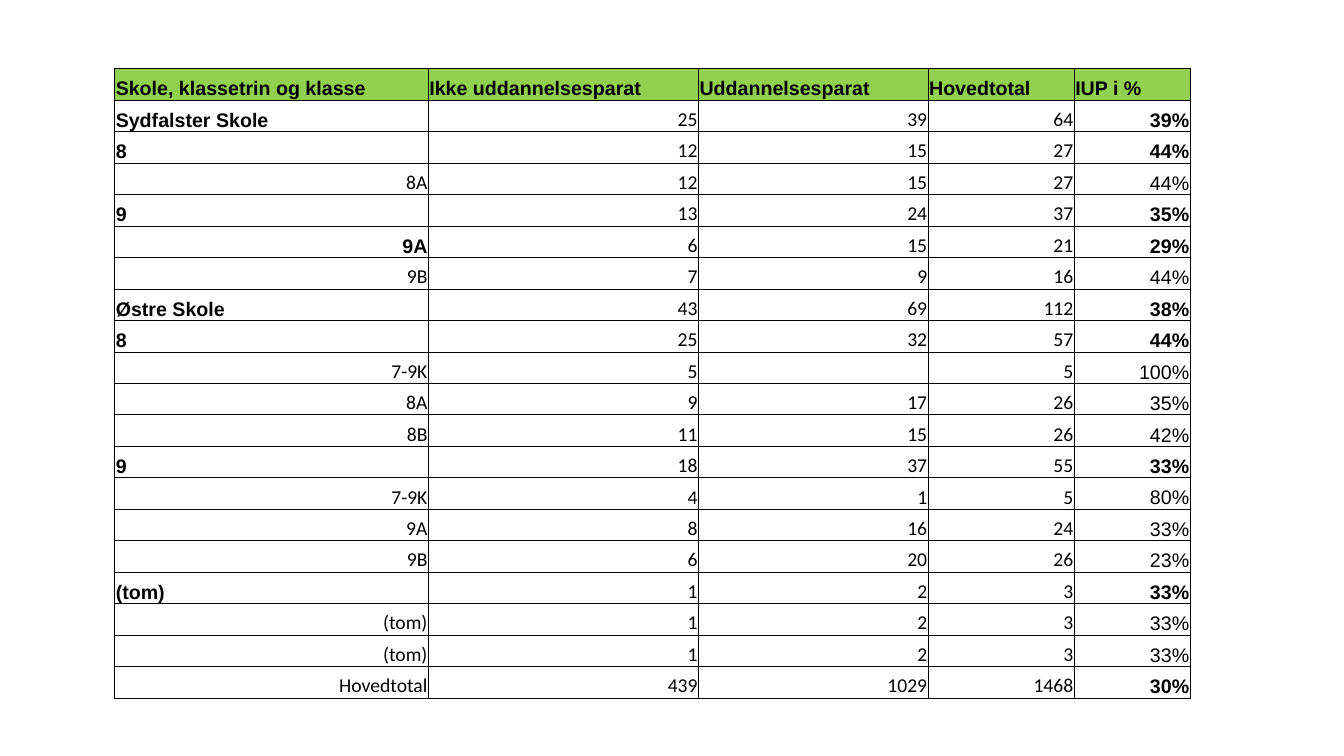
from lxml import etree
from pptx import Presentation
from pptx.dml.color import RGBColor
from pptx.enum import text
from pptx.oxml import ns
from pptx.util import Pt

HEAD = ["Skole, klassetrin og klasse", "Ikke uddannelsesparat",
        "Uddannelsesparat", "Hovedtotal", "IUP i %"]
# Row kinds: group, key class, class, total
ROWS = [
    ("group", "Sydfalster Skole", "25", "39", "64", "39%"),
    ("group", "8", "12", "15", "27", "44%"),
    ("class", "8A", "12", "15", "27", "44%"),
    ("group", "9", "13", "24", "37", "35%"),
    ("key", "9A", "6", "15", "21", "29%"),
    ("class", "9B", "7", "9", "16", "44%"),
    ("group", "Østre Skole", "43", "69", "112", "38%"),
    ("group", "8", "25", "32", "57", "44%"),
    ("class", "7-9K", "5", "", "5", "100%"),
    ("class", "8A", "9", "17", "26", "35%"),
    ("class", "8B", "11", "15", "26", "42%"),
    ("group", "9", "18", "37", "55", "33%"),
    ("class", "7-9K", "4", "1", "5", "80%"),
    ("class", "9A", "8", "16", "24", "33%"),
    ("class", "9B", "6", "20", "26", "23%"),
    ("group", "(tom)", "1", "2", "3", "33%"),
    ("class", "(tom)", "1", "2", "3", "33%"),
    ("class", "(tom)", "1", "2", "3", "33%"),
    ("total", "Hovedtotal", "439", "1029", "1468", "30%"),
]
WIDTHS = [224, 193, 164, 104.4, 82.8]
HIGH = 22.5


def color(code):
    return RGBColor.from_string(code)


def frame(cell):
    """Put a thin black border on all four sides, before the cell's fill."""
    props = cell._tc.get_or_add_tcPr()
    for i, side in enumerate(["lnL", "lnR", "lnT", "lnB"]):
        line = etree.Element(ns.qn("a:" + side), w=str(Pt(0.5)))
        fill = etree.SubElement(line, ns.qn("a:solidFill"))
        etree.SubElement(fill, ns.qn("a:srgbClr"), val="000000")
        props.insert(i, line)


deck = Presentation()
deck.slide_width, deck.slide_height = Pt(960), Pt(540)
slide = deck.slides.add_slide(deck.slide_layouts[6])

lines = [("head", *HEAD)] + ROWS
table = slide.shapes.add_table(
    len(lines), len(HEAD), Pt(82), Pt(49),
    Pt(sum(WIDTHS)), Pt(HIGH * len(lines))).table
table.horz_banding = False
for col, width in zip(table.columns, WIDTHS):
    col.width = Pt(width)

for r, (kind, *words) in enumerate(lines):
    table.rows[r].height = Pt(HIGH)
    for c, word in enumerate(words):
        cell = table.cell(r, c)
        cell.text = word
        cell.vertical_anchor = text.MSO_ANCHOR.BOTTOM
        cell.margin_left = cell.margin_right = cell.margin_top = Pt(0.7)
        cell.margin_bottom = 0
        if kind == "head":
            cell.fill.solid()
            cell.fill.fore_color.rgb = color("92D050")
        else:
            cell.fill.background()
        frame(cell)

        label, rate = c == 0, c == 4
        bold = (kind == "head" or label and kind in ("group", "key")
                or rate and kind != "class")
        left = kind == "head" or label and kind == "group"
        para = cell.text_frame.paragraphs[0]
        para.alignment = text.PP_ALIGN.LEFT if left else text.PP_ALIGN.RIGHT
        para.font.name = "Arial" if bold or rate else "Calibri"
        para.font.size = Pt(14)
        para.font.bold = bold
        para.font.color.rgb = color("000000")

deck.save("out.pptx")
